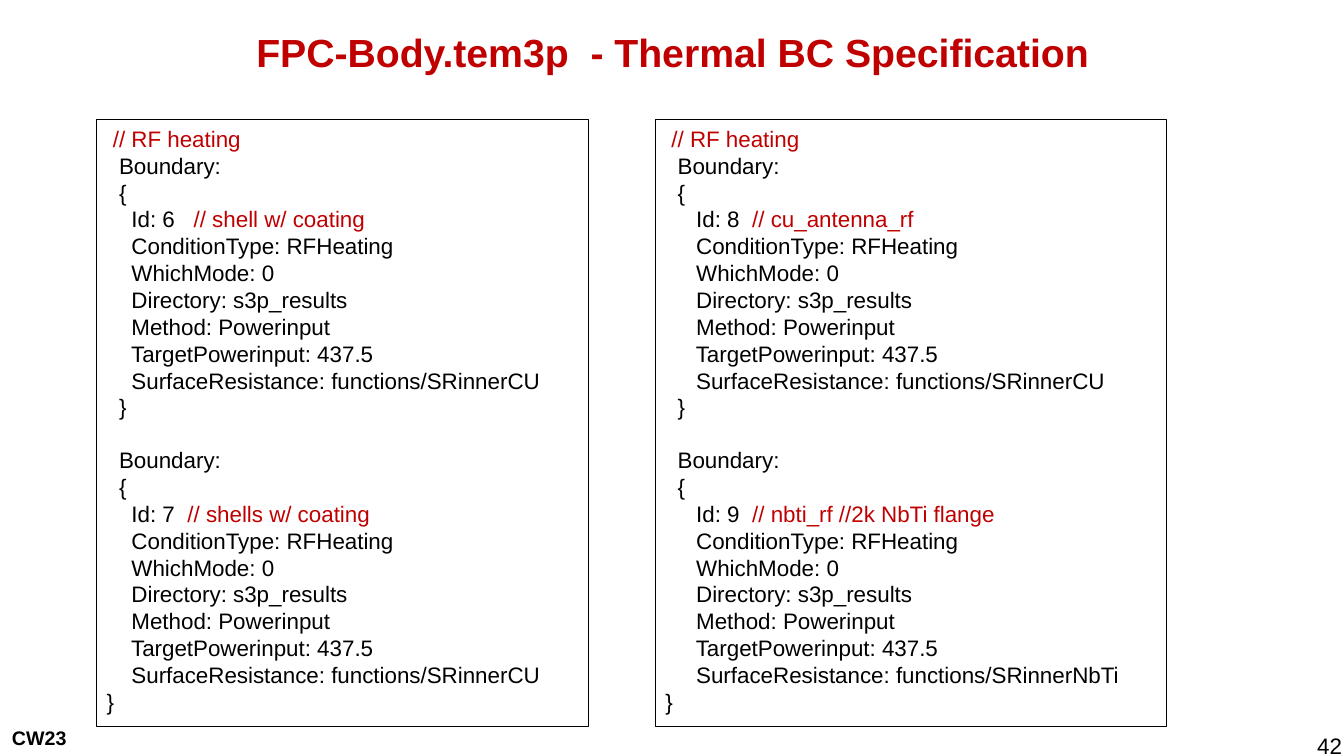
from pptx import Presentation
from pptx.dml.color import RGBColor
from pptx.enum.shapes import MSO_SHAPE as Shape
from pptx.enum.text import MSO_ANCHOR as Anchor, PP_ALIGN as Align
from pptx.util import Inches, Pt

RED = RGBColor(0xC0, 0x00, 0x00)
BLACK = RGBColor(0x00, 0x00, 0x00)
FONT = "Arial"
CODE_SIZE = 16
BLANK_LINE = Pt(18.4)

# Each boundary: id with its gap, comment, surface resistance function
SHELLS = [
    ("Id: 6   ", "// shell w/ coating", "SRinnerCU"),
    ("Id: 7  ", "// shells w/ coating", "SRinnerCU"),
]
ANTENNA_AND_FLANGE = [
    ("Id: 8  ", "// cu_antenna_rf", "SRinnerCU"),
    ("Id: 9  ", "// nbti_rf //2k NbTi flange", "SRinnerNbTi"),
]
SETTINGS = [
    "ConditionType: RFHeating",
    "WhichMode: 0",
    "Directory: s3p_results",
    "Method: Powerinput",
    "TargetPowerinput: 437.5",
]


def add_run(paragraph, text, size, color=BLACK, bold=False):
    run = paragraph.add_run()
    run.text = text
    run.font.name = FONT
    run.font.size = Pt(size)
    run.font.bold = bold
    run.font.color.rgb = color


def add_title(slide, text, left, top, width, height):
    title = slide.shapes.title
    title.left, title.top = Inches(left), Inches(top)
    title.width, title.height = Inches(width), Inches(height)
    title.text_frame.vertical_anchor = Anchor.MIDDLE
    paragraph = title.text_frame.paragraphs[0]
    paragraph.alignment = Align.CENTER
    add_run(paragraph, text, 28, RED, bold=True)


def boundary_lines(boundary, indent, closing):
    """Return the lines of one boundary as (code, comment) pairs."""
    identifier, comment, resistance = boundary
    settings = SETTINGS + [f"SurfaceResistance: functions/{resistance}"]
    return [
        ("  Boundary:", ""),
        ("  {", ""),
        (indent + identifier, comment),
        *[(indent + setting, "") for setting in settings],
        (closing, ""),
    ]


def add_code_panel(slide, boundaries, indent, left, top, width, height):
    panel = slide.shapes.add_shape(
        Shape.RECTANGLE, Inches(left), Inches(top), Inches(width), Inches(height))
    panel.shadow.inherit = False
    panel.fill.background()
    panel.line.color.rgb = BLACK
    panel.line.width = Pt(0.75)
    frame = panel.text_frame
    frame.word_wrap = True
    frame.vertical_anchor = Anchor.TOP

    first, second = boundaries
    first_lines = [(" ", "// RF heating")] + boundary_lines(first, indent, "  }")
    lines = first_lines + boundary_lines(second, indent, "}")
    for number, (code, comment) in enumerate(lines):
        paragraph = frame.add_paragraph() if number else frame.paragraphs[0]
        paragraph.alignment = Align.LEFT
        if number == len(first_lines):
            paragraph.space_before = BLANK_LINE
        add_run(paragraph, code, CODE_SIZE)
        if comment:
            add_run(paragraph, comment, CODE_SIZE, RED)


def add_label(slide, text, size, alignment, left, top, width, height, bold=False):
    box = slide.shapes.add_textbox(
        Inches(left), Inches(top), Inches(width), Inches(height))
    frame = box.text_frame
    frame.word_wrap = True
    frame.margin_right = Inches(0.02)
    paragraph = frame.paragraphs[0]
    paragraph.alignment = alignment
    add_run(paragraph, text, size, bold=bold)


def main():
    presentation = Presentation()
    presentation.slide_width = Inches(13.33)
    presentation.slide_height = Inches(7.5)
    slide = presentation.slides.add_slide(presentation.slide_layouts[5])

    # Title
    add_title(slide, "FPC-Body.tem3p  - Thermal BC Specification", 1.67, 0.1, 10, 0.82)

    # Boundary condition listings
    add_code_panel(slide, SHELLS, " " * 4, 0.96, 1.19, 4.88, 6.02)
    add_code_panel(slide, ANTENNA_AND_FLANGE, " " * 5, 6.5, 1.19, 5.07, 6.02)

    # Footer
    add_label(slide, "CW23", 14, Align.LEFT, 0.02, 7.15, 1.81, 0.34, bold=True)
    add_label(slide, "42", 16, Align.RIGHT, 12.47, 7.21, 0.86, 0.29)

    presentation.save("out.pptx")


if __name__ == "__main__":
    main()
